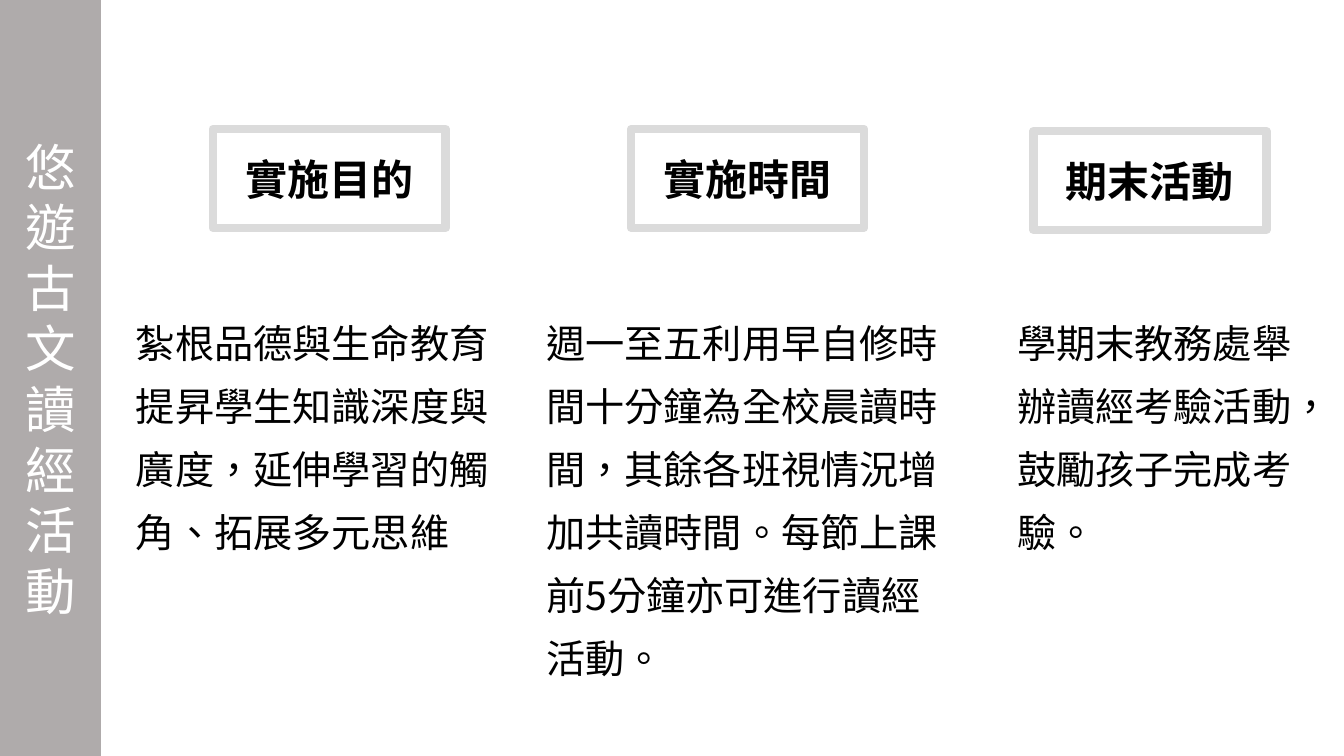
from pptx import Presentation
from pptx.dml.color import RGBColor
from pptx.enum.lang import MSO_LANGUAGE_ID
from pptx.enum.shapes import MSO_SHAPE
from pptx.enum.text import MSO_ANCHOR, MSO_AUTO_SIZE, PP_ALIGN
from pptx.oxml.ns import qn
from pptx.util import Inches, Pt

COLORS = {"sidebar": "AFABAB", "frame": "DBDBDB", "white": "FFFFFF", "text": "000000"}
FONT = "Noto Sans CJK SC"
HEADING_W, HEADING_H = 2.31, 0.98
BODY_TOP = 2.96

COLUMNS = [
    ("實施目的", (2.11, 1.28),
     "紮根品德與生命教育提昇學生知識深度與廣度，延伸學習的觸角、拓展多元思維", (1.25, 3.81, 2.56)),
    ("實施時間", (6.26, 1.28),
     "週一至五利用早自修時間十分鐘為全校晨讀時間，其餘各班視情況增加共讀時間。"
     "每節上課前5分鐘亦可進行讀經活動。", (5.32, 4.19, 3.82)),
    ("期末活動", (10.25, 1.3),
     "學期末教務處舉辦讀經考驗活動，鼓勵孩子完成考驗。", (9.99, 3.13, 2.56)),
]


def color(name):
    return RGBColor.from_string(COLORS[name])


def write(tf, text, size, fill="text", bold=False, align=PP_ALIGN.LEFT,
          anchor=MSO_ANCHOR.TOP, spacing=None, auto_size=MSO_AUTO_SIZE.NONE):
    tf.word_wrap = True
    tf.auto_size = auto_size
    tf.vertical_anchor = anchor
    p = tf.paragraphs[0]
    p.alignment = align
    if spacing:
        p.line_spacing = Pt(spacing)
    r = p.add_run()
    r.text = text
    r.font.name = FONT
    r.font.size = Pt(size)
    r.font.bold = bold
    r.font.color.rgb = color(fill)
    r.font.language_id = MSO_LANGUAGE_ID.TRADITIONAL_CHINESE
    ea = r.font._element.makeelement(qn("a:ea"), {"typeface": FONT})
    r.font._element.find(qn("a:latin")).addnext(ea)


def add_sidebar_title(s, prs, text):
    sp = s.shapes.title
    sp.left, sp.top, sp.width, sp.height = 0, 0, Inches(1), prs.slide_height
    sp.fill.solid()
    sp.fill.fore_color.rgb = color("sidebar")
    write(sp.text_frame, text, 36, fill="white", align=PP_ALIGN.CENTER,
          anchor=MSO_ANCHOR.MIDDLE, spacing=43.3)


def add_heading(s, text, left, top):
    sp = s.shapes.add_shape(MSO_SHAPE.RECTANGLE, Inches(left), Inches(top),
                            Inches(HEADING_W), Inches(HEADING_H))
    sp.shadow.inherit = False
    sp.fill.background()
    sp.line.color.rgb = color("frame")
    sp.line.width = Pt(6)
    write(sp.text_frame, text, 30, bold=True, align=PP_ALIGN.CENTER,
          anchor=MSO_ANCHOR.MIDDLE)


def add_body(s, text, left, width, height):
    sp = s.shapes.add_textbox(Inches(left), Inches(BODY_TOP),
                              Inches(width), Inches(height))
    write(sp.text_frame, text, 28, spacing=45,
          auto_size=MSO_AUTO_SIZE.SHAPE_TO_FIT_TEXT)


def main():
    prs = Presentation()
    prs.slide_width, prs.slide_height = Inches(13.33), Inches(7.5)
    s = prs.slides.add_slide(prs.slide_layouts[5])
    add_sidebar_title(s, prs, "悠遊古文讀經活動")
    for heading, heading_at, body, body_at in COLUMNS:
        add_heading(s, heading, *heading_at)
        add_body(s, body, *body_at)
    prs.save("out.pptx")


if __name__ == "__main__":
    main()
